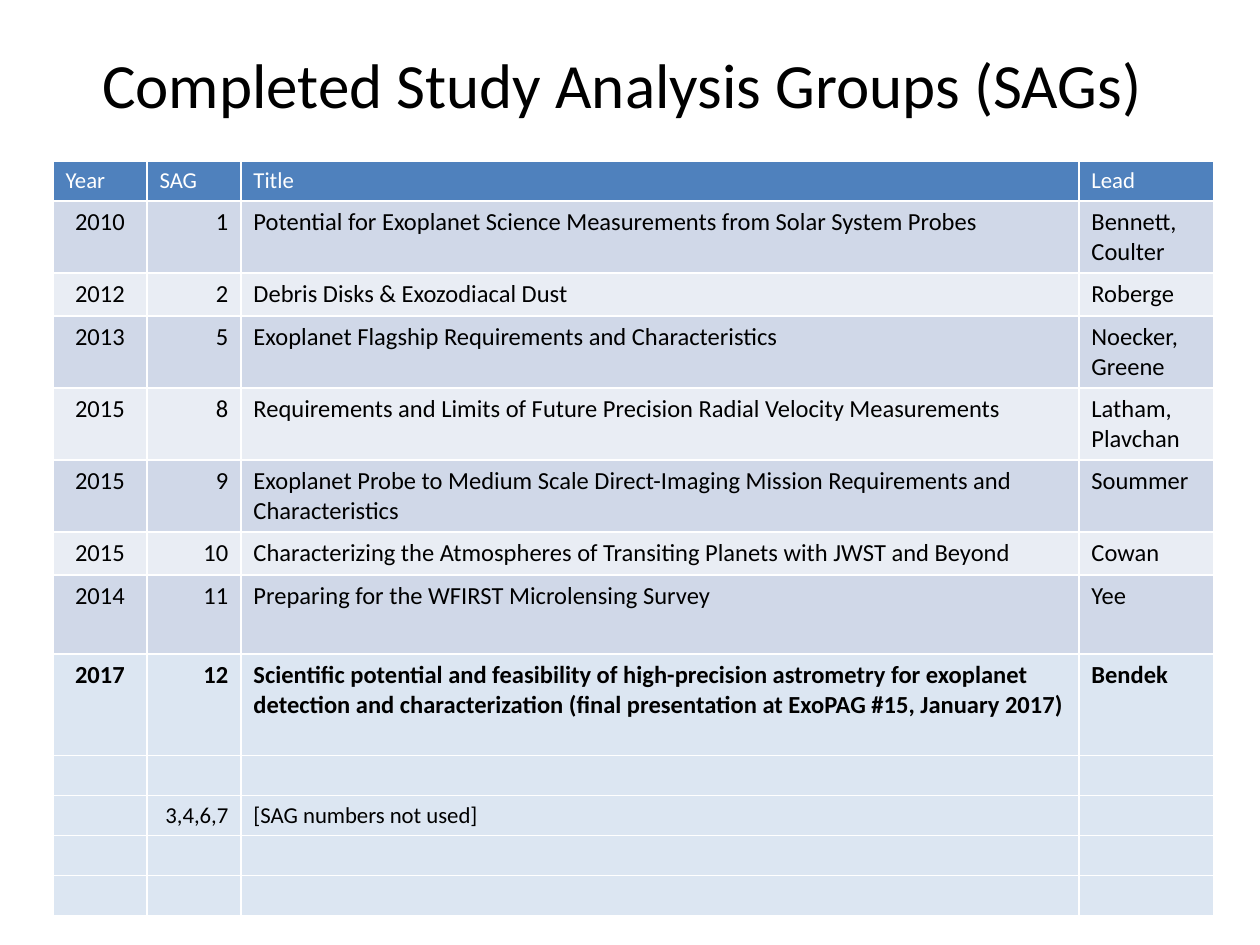
from dataclasses import dataclass

from lxml.etree import SubElement
from pptx import Presentation
from pptx.dml.color import RGBColor
from pptx.enum.text import MSO_ANCHOR, PP_ALIGN
from pptx.oxml.ns import qn
from pptx.util import Emu, Pt

EMU_PER_PX = 914400 // 126


def px(length):
    return Emu(length * EMU_PER_PX)


@dataclass(frozen=True)
class Theme:
    font: str = "Calibri"
    title_size: int = 36
    body_size: int = 14
    small_size: int = 13
    text: str = "000000"
    header_text: str = "FFFFFF"
    header_fill: str = "4F81BD"
    bands: tuple = ("D0D8E8", "E9EDF4")
    recent_fill: str = "DCE6F2"


class SlideBuilder:
    def __init__(self, slide, theme):
        self.slide = slide
        self.theme = theme

    def format_text(self, text_frame, size, color, align, bold=False):
        for paragraph in text_frame.paragraphs:
            paragraph.alignment = align
            for run in paragraph.runs:
                font = run.font
                font.name, font.size, font.bold = self.theme.font, Pt(size), bold
                font.color.rgb = RGBColor.from_string(color)
            if not paragraph.runs:
                # An empty line needs its own size to keep the row low
                SubElement(paragraph._p, qn("a:endParaRPr"), sz=str(size * 100))

    def title(self, text, left, top, width, height):
        text_frame = self.slide.shapes.add_textbox(
            px(left), px(top), px(width), px(height)).text_frame
        text_frame.word_wrap = True
        text_frame.vertical_anchor = MSO_ANCHOR.MIDDLE
        text_frame.text = text
        self.format_text(text_frame, self.theme.title_size, self.theme.text, PP_ALIGN.CENTER)

    def table(self, rows, left, top, column_widths, row_heights, aligns):
        table = self.slide.shapes.add_table(
            len(rows), len(column_widths), px(left), px(top),
            px(sum(column_widths)), px(sum(row_heights))).table
        for column, width in zip(table.columns, column_widths):
            column.width = px(width)
        for row, height, (values, style) in zip(table.rows, row_heights, rows):
            row.height = px(height)
            for cell, value, align in zip(row.cells, values, aligns):
                cell.text = value
                cell.fill.solid()
                cell.fill.fore_color.rgb = RGBColor.from_string(style["fill"])
                self.format_text(cell.text_frame, style["size"], style["color"],
                                 style.get("align", align), style.get("bold", False))


HEADER = ("Year", "SAG", "Title", "Lead")
COMPLETED = [
    ("2010", "1", "Potential for Exoplanet Science Measurements from Solar System Probes",
     "Bennett,\nCoulter"),
    ("2012", "2", "Debris Disks & Exozodiacal Dust", "Roberge"),
    ("2013", "5", "Exoplanet Flagship Requirements and Characteristics", "Noecker, Greene"),
    ("2015", "8", "Requirements and Limits of Future Precision Radial Velocity Measurements",
     "Latham, Plavchan"),
    ("2015", "9", "Exoplanet Probe to Medium Scale Direct-Imaging Mission Requirements "
     "and Characteristics", "Soummer"),
    ("2015", "10", "Characterizing the Atmospheres of Transiting Planets with JWST and Beyond",
     "Cowan"),
    ("2014", "11", "Preparing for the WFIRST Microlensing Survey", "Yee"),
]
RECENT = ("2017", "12", "Scientific potential and feasibility of high-precision astrometry for "
          "exoplanet detection and characterization (final presentation at ExoPAG #15, "
          "January 2017)", "Bendek")
EMPTY = ("", "", "", "")
UNUSED = ("", "3,4,6,7", "[SAG numbers not used]", "")


def main():
    theme = Theme()
    presentation = Presentation()
    presentation.slide_width, presentation.slide_height = px(1260), px(945)
    slide = presentation.slides.add_slide(presentation.slide_layouts[6])
    builder = SlideBuilder(slide, theme)

    # Title
    builder.title("Completed Study Analysis Groups (SAGs)", 63, 42, 1118, 82)

    # Row styles: header, banded groups, latest group, closing rows
    header = dict(fill=theme.header_fill, size=theme.small_size,
                  color=theme.header_text, align=PP_ALIGN.LEFT)
    body = dict(size=theme.body_size, color=theme.text)
    recent = dict(body, fill=theme.recent_fill, bold=True)
    closing = dict(recent, size=theme.small_size, bold=False)
    rows = [(HEADER, header)]
    rows += [(values, dict(body, fill=theme.bands[index % 2]))
             for index, values in enumerate(COMPLETED)]
    rows += [(RECENT, recent)]
    rows += [(values, closing) for values in (EMPTY, UNUSED, EMPTY, EMPTY)]

    # Table of study groups
    small, single, double = 40, 43, 72
    builder.table(
        rows, 53, 161,
        column_widths=[94, 94, 838, 135],
        row_heights=[small, double, single, double, double, double, single, 79, 102] + [small] * 4,
        aligns=[PP_ALIGN.CENTER, PP_ALIGN.RIGHT, PP_ALIGN.LEFT, PP_ALIGN.LEFT])

    presentation.save("out.pptx")


if __name__ == "__main__":
    main()
